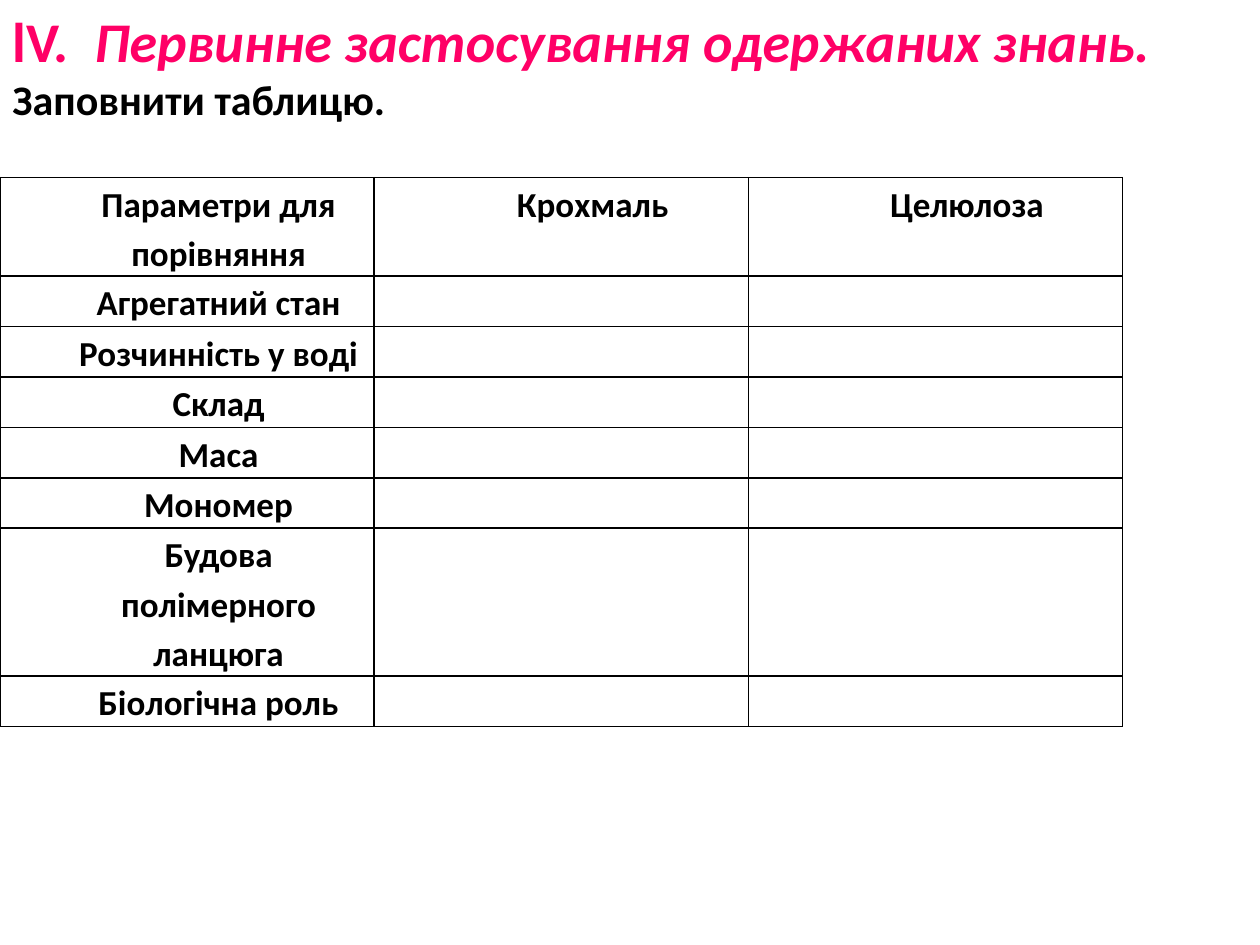
import pptx
import pptx.dml.color
import pptx.enum.text
import pptx.oxml
import pptx.oxml.ns
import pptx.util
from pptx.util import Inches

PINK = pptx.dml.color.RGBColor(0xFF, 0x00, 0x66)
BLACK = pptx.dml.color.RGBColor(0x00, 0x00, 0x00)

SUBSTANCES = ["Крохмаль", "Целюлоза"]
PARAMETERS = [
    ("Параметри для порівняння", 0.77),
    ("Агрегатний стан", 0.4),
    ("Розчинність у воді", 0.4),
    ("Склад", 0.4),
    ("Маса", 0.4),
    ("Мономер", 0.4),
    ("Будова полімерного ланцюга", 1.15),
    ("Біологічна роль", 0.4),
]
COLUMN_WIDTH = 2.97


def set_font(font, size, color):
    """Apply the slide's bold typeface in the given size and colour."""
    font.name = "Calibri"
    font.size = pptx.util.Pt(size)
    font.bold = True
    font.color.rgb = color


def add_heading(slide):
    """Add the section title and the task beneath it."""
    heading = slide.shapes.add_textbox(0, 0, Inches(9.31), Inches(1.04))
    frame = heading.text_frame
    frame.word_wrap = False
    frame.auto_size = pptx.enum.text.MSO_AUTO_SIZE.SHAPE_TO_FIT_TEXT
    frame.vertical_anchor = pptx.enum.text.MSO_ANCHOR.MIDDLE
    section = frame.paragraphs[0]
    section.add_run().text = "lV.  "
    topic = section.add_run()
    topic.text = "Первинне застосування одержаних знань."
    topic.font.italic = True
    set_font(section.font, 32, PINK)
    task = frame.add_paragraph()
    task.text = "Заповнити таблицю."
    set_font(task.font, 24, BLACK)


def add_borders(cell):
    """Draw a thin black line on every side of a cell."""
    properties = cell._tc.get_or_add_tcPr()
    for position, side in enumerate(("lnL", "lnR", "lnT", "lnB")):
        border = pptx.oxml.parse_xml(
            f'<a:{side} {pptx.oxml.ns.nsdecls("a")} w="12700"><a:solidFill>'
            f'<a:srgbClr val="{BLACK}"/></a:solidFill></a:{side}>'
        )
        properties.insert(position, border)


def format_cell(cell, label):
    """Fill in one table cell with its label, margins and borders."""
    cell.margin_left = cell.margin_right = Inches(0.07)
    cell.margin_top = cell.margin_bottom = 0
    cell.fill.background()
    add_borders(cell)
    paragraph = cell.text_frame.paragraphs[0]
    paragraph.text = label
    paragraph.alignment = pptx.enum.text.PP_ALIGN.CENTER
    paragraph.line_spacing = 1.15
    paragraph._p.get_or_add_pPr().set("marL", str(Inches(0.5)))
    set_font(paragraph.font, 20, BLACK)


def add_comparison(slide):
    """Add the table comparing the two substances."""
    column_count = 1 + len(SUBSTANCES)
    height = sum(row_height for _, row_height in PARAMETERS)
    comparison = slide.shapes.add_table(
        len(PARAMETERS), column_count, 0, Inches(1.41),
        Inches(COLUMN_WIDTH * column_count), Inches(height),
    ).table
    comparison.first_row = False
    comparison.horz_banding = False
    for column in comparison.columns:
        column.width = Inches(COLUMN_WIDTH)
    for row_index, (parameter, row_height) in enumerate(PARAMETERS):
        row = comparison.rows[row_index]
        row.height = Inches(row_height)
        values = SUBSTANCES if row_index == 0 else [""] * len(SUBSTANCES)
        for cell, label in zip(row.cells, [parameter, *values]):
            format_cell(cell, label)


def main():
    """Build and save the slide."""
    presentation = pptx.Presentation()
    presentation.slide_width = Inches(10)
    presentation.slide_height = Inches(7.5)
    slide = presentation.slides.add_slide(presentation.slide_layouts[6])
    add_comparison(slide)
    add_heading(slide)
    presentation.save("out.pptx")


if __name__ == "__main__":
    main()
